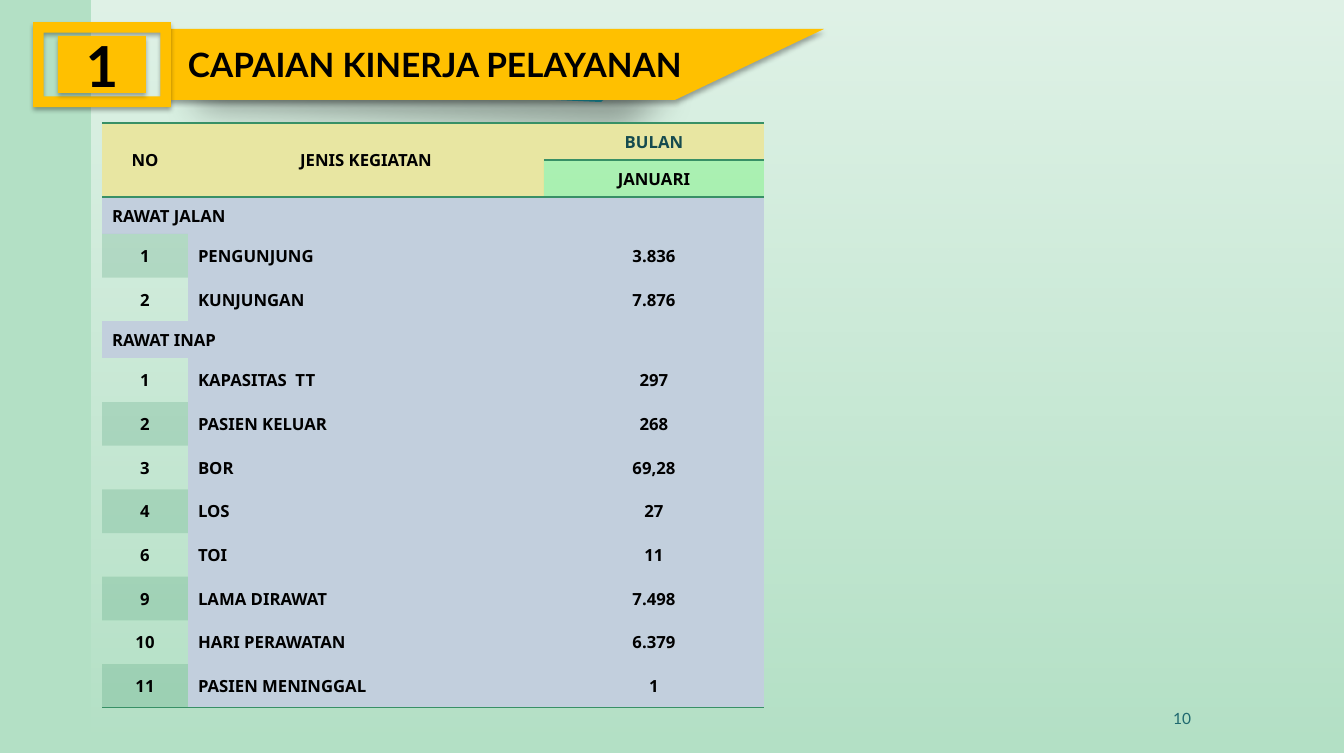
from dataclasses import dataclass
from typing import Optional

from lxml.etree import SubElement
from pptx import Presentation
from pptx.dml.color import RGBColor
from pptx.enum.shapes import MSO_SHAPE
from pptx.enum.text import MSO_ANCHOR, PP_ALIGN
from pptx.oxml import parse_xml
from pptx.oxml.ns import nsdecls, qn
from pptx.util import Emu, Pt

PX = 9108  # EMU per px
GREEN, YELLOW, SAND, BLUE, BLACK = "389066", "FFC000", "E8E6A2", "C2CFDD", "000000"
LEFT, CENTER, RIGHT = PP_ALIGN.LEFT, PP_ALIGN.CENTER, PP_ALIGN.RIGHT


@dataclass
class Shadow:
    alpha: int
    blur: float
    dist: float
    angle: int


@dataclass
class Activity:
    no: str
    name: str
    value: str
    shaded: bool = False


@dataclass
class Section:
    title: str
    activities: list[Activity]


SOFT = Shadow(32, 3.5, 2.2, 90)
WIDE = Shadow(35, 25, 25, 45)

SECTIONS = [
    Section("RAWAT JALAN", [
        Activity("1", "PENGUNJUNG", "3.836", True),
        Activity("2", "KUNJUNGAN", "7.876"),
    ]),
    Section("RAWAT INAP", [
        Activity("1", "KAPASITAS  TT", "297"),
        Activity("2", "PASIEN KELUAR", "268", True),
        Activity("3", "BOR", "69,28"),
        Activity("4", "LOS", "27", True),
        Activity("6", "TOI", "11"),
        Activity("9", "LAMA DIRAWAT", "7.498", True),
        Activity("10", "HARI PERAWATAN", "6.379"),
        Activity("11", "PASIEN MENINGGAL", "1", True),
    ]),
]


def px(n: float) -> Emu:
    return Emu(round(n * PX))


def rgb(color: str) -> RGBColor:
    return RGBColor.from_string(color)


def set_alpha(clr, percent: int) -> None:
    SubElement(clr, qn("a:alpha")).set("val", str(percent * 1000))


def add_text(tf, text: str, size: float, font: str, color: str = BLACK,
             align=LEFT, bold: bool = True) -> None:
    tf.word_wrap = True
    tf.vertical_anchor = MSO_ANCHOR.MIDDLE
    p = tf.paragraphs[0]
    p.alignment = align
    r = p.add_run()
    r.text = text
    r.font.size, r.font.name, r.font.bold = Pt(size), font, bold
    r.font.color.rgb = rgb(color)


def style_shape(sp, color: str, shadow: Shadow) -> None:
    sp.fill.solid()
    sp.fill.fore_color.rgb = rgb(color)
    sp.line.fill.background()
    sp.shadow.inherit = False
    effects = sp._element.spPr.find(qn("a:effectLst"))
    effects.append(parse_xml(
        f'<a:outerShdw {nsdecls("a")} blurRad="{Pt(shadow.blur)}" dist="{Pt(shadow.dist)}" '
        f'dir="{shadow.angle * 60000}" algn="ctr" rotWithShape="0"><a:srgbClr val="{BLACK}">'
        f'<a:alpha val="{shadow.alpha * 1000}"/></a:srgbClr></a:outerShdw>'))


def add_outline(shapes, points: list[tuple[int, int]], color: str, shadow: Shadow) -> None:
    fb = shapes.build_freeform(*points[0], scale=PX)
    fb.add_line_segments(points[1:], close=True)
    style_shape(fb.convert_to_shape(), color, shadow)


def add_box(shapes, kind, x: int, y: int, w: int, h: int):
    sp = shapes.add_shape(kind, px(x), px(y), px(w), px(h))
    style_shape(sp, YELLOW, SOFT)
    return sp


def add_textbox(shapes, x: int, y: int, w: int, h: int):
    return shapes.add_textbox(px(x), px(y), px(w), px(h)).text_frame


def fill_cell(cell, text: str, fill: Optional[str], align=CENTER,
              color: str = BLACK, alpha: int = 100) -> None:
    if text:
        add_text(cell.text_frame, text, 12, "Noto Sans", color, align)
    cell.vertical_anchor = MSO_ANCHOR.MIDDLE
    if fill is None:
        cell.fill.background()
        return
    cell.fill.solid()
    cell.fill.fore_color.rgb = rgb(fill)
    if alpha < 100:
        set_alpha(cell._tc.tcPr.find(f'{qn("a:solidFill")}/{qn("a:srgbClr")}'), alpha)


def add_borders(cell, *sides: str) -> None:
    for i, side in enumerate(sides):
        cell._tc.get_or_add_tcPr().insert(i, parse_xml(
            f'<a:ln{side} {nsdecls("a")} w="{Pt(1)}"><a:solidFill>'
            f'<a:srgbClr val="{GREEN}"/></a:solidFill></a:ln{side}>'))


def add_activity_table(shapes) -> None:
    widths, header_h, total_h = (86, 356, 220), 37, 585
    count = sum(len(sec.activities) for sec in SECTIONS)
    short_rows = 2 + len(SECTIONS)
    activity_h = (total_h - short_rows * header_h) / count
    tbl = shapes.add_table(short_rows + count, 3, px(102), px(123),
                           px(sum(widths)), px(total_h)).table
    tbl.first_row = tbl.horz_banding = False
    # No style, no grid
    tbl._tbl.tblPr.find(qn("a:tableStyleId")).text = "{2D5ABB26-0587-4C30-8999-92F81FD0307C}"
    for col, w in zip(tbl.columns, widths):
        col.width = px(w)
    for row in tbl.rows:
        row.height = px(header_h)

    # Header
    for c, title in enumerate(("NO", "JENIS KEGIATAN")):
        tbl.cell(0, c).merge(tbl.cell(1, c))
        fill_cell(tbl.cell(0, c), title, SAND)
    fill_cell(tbl.cell(0, 2), "BULAN", SAND, color="164B4F")
    fill_cell(tbl.cell(1, 2), "JANUARI", "00FF00", alpha=20)

    # Sections and their activities
    n = 2
    for sec in SECTIONS:
        tbl.cell(n, 0).merge(tbl.cell(n, 2))
        fill_cell(tbl.cell(n, 0), sec.title, BLUE, LEFT)
        n += 1
        for act in sec.activities:
            tbl.rows[n].height = px(activity_h)
            fill_cell(tbl.cell(n, 0), act.no, GREEN if act.shaded else None, alpha=20)
            fill_cell(tbl.cell(n, 1), act.name, BLUE, LEFT)
            fill_cell(tbl.cell(n, 2), act.value, BLUE)
            n += 1

    # Rules
    for c in range(3):
        add_borders(tbl.cell(0, c), "T", "B")
        add_borders(tbl.cell(1, c), "B")
        add_borders(tbl.cell(n - 1, c), "B")


def main() -> None:
    prs = Presentation()
    prs.slide_width, prs.slide_height = px(1344), px(753)
    s = prs.slides.add_slide(prs.slide_layouts[6])

    # Background with a fading white panel
    s.background.fill.solid()
    s.background.fill.fore_color.rgb = rgb("B3E0C5")
    panel = s.shapes.add_shape(MSO_SHAPE.RECTANGLE, px(92), 0, px(1252), px(753))
    panel.shadow.inherit = False
    panel.line.fill.background()
    panel.fill.gradient()
    panel.fill.gradient_angle = 270
    for stop in panel.fill.gradient_stops:
        stop.color.rgb = rgb("FFFFFF")
    stops = panel._element.spPr.find(qn("a:gradFill")).iter(qn("a:srgbClr"))
    for clr, alpha in zip(list(stops), (60, 0)):
        set_alpha(clr, alpha)

    # Page number
    add_text(add_textbox(s.shapes, 888, 698, 313, 40), "10", 11.1, "Lato",
             "1F696F", RIGHT, bold=False)

    # Title banner
    banner = s.shapes.add_group_shape().shapes
    add_outline(banner, [(174, 35), (639, 56), (638, 70), (601, 102), (172, 83)], "1B91A1", WIDE)
    add_outline(banner, [(163, 29), (824, 29), (675, 100), (163, 100)], YELLOW, SOFT)
    add_box(banner, MSO_SHAPE.FRAME, 33, 22, 138, 85)
    number = add_box(banner, MSO_SHAPE.RECTANGLE, 58, 36, 88, 57)
    add_text(number.text_frame, "1", 40.5, "Lato", align=CENTER)
    title = add_textbox(banner, 188, 39, 589, 50)
    title.margin_left = 0
    add_text(title, "CAPAIAN KINERJA PELAYANAN", 24, "Lato")

    add_activity_table(s.shapes)
    prs.save("out.pptx")


if __name__ == "__main__":
    main()
